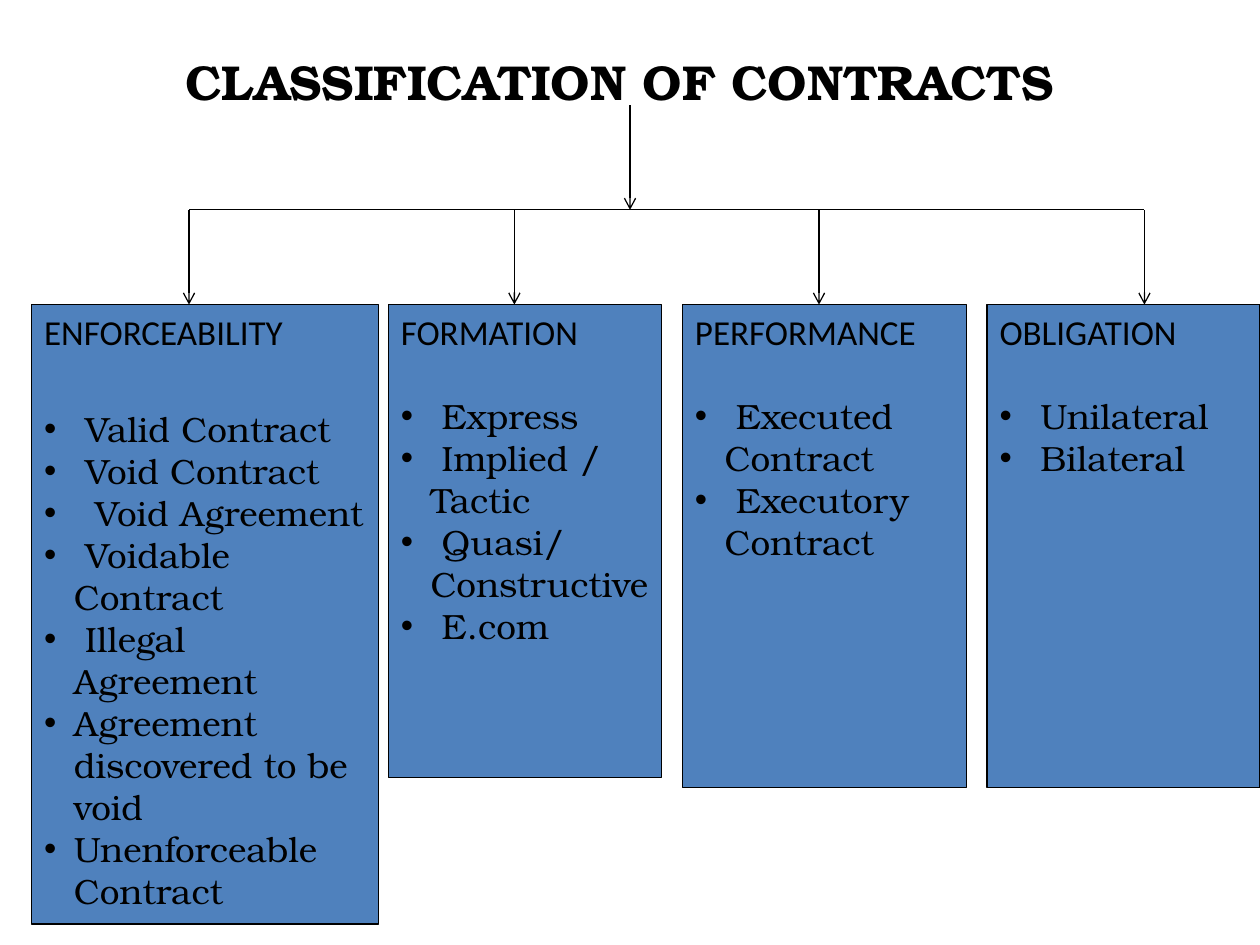
from dataclasses import dataclass

from lxml import etree
from pptx import Presentation
from pptx import util as u
from pptx.dml.color import RGBColor
from pptx.enum import shapes, text
from pptx.oxml.ns import qn

COLORS = {"ink": "000000", "box": "4F81BD"}
SERIF = "TeX Gyre Bonum"
SANS = "Calibri"
CENTER_X, TITLE_BOTTOM, BRANCH_Y, BOX_TOP = 12.7, 2.12, 4.23, 6.14
HANG = 0.6


@dataclass
class Item:
    label: str
    extra_indent: float = 0


@dataclass
class Category:
    heading: str
    left: float
    width: float
    height: float
    arrow_x: float
    items: list[Item]
    gap: float = 24


CATEGORIES = [
    Category("ENFORCEABILITY", 0.64, 6.99, 12.49, 3.81, [
        Item(" Valid Contract"),
        Item(" Void Contract"),
        Item(" Void Agreement", 0.2),
        Item(" Voidable Contract"),
        Item(" Illegal Agreement"),
        Item("Agreement discovered to be void"),
        Item("Unenforceable Contract"),
    ], gap=31),
    Category("FORMATION", 7.83, 5.5, 9.53, 10.37, [
        Item(" Express"),
        Item(" Implied / Tactic"),
        Item(" Quasi/ Constructive"),
        Item(" E.com"),
    ]),
    Category("PERFORMANCE", 13.76, 5.72, 9.74, 16.51, [
        Item(" Executed Contract"),
        Item(" Executory Contract"),
    ]),
    Category("OBLIGATION", 19.9, 5.5, 9.74, 23.07, [
        Item(" Unilateral"),
        Item(" Bilateral"),
    ]),
]


def color(name: str) -> RGBColor:
    return RGBColor.from_string(COLORS[name])


def style(paragraph, font_name: str, size: float, bold: bool = False) -> None:
    font = paragraph.font
    font.name, font.size, font.bold = font_name, u.Pt(size), bold
    font.color.rgb = color("ink")


def add_bullet(paragraph, indent: float) -> None:
    properties = paragraph._p.get_or_add_pPr()
    properties.set("marL", str(u.Cm(indent)))
    properties.set("indent", str(-u.Cm(indent)))
    bullet_font = etree.Element(qn("a:buFont"), typeface="Arial")
    bullet = etree.Element(qn("a:buChar"), char="•")
    defaults = properties.find(qn("a:defRPr"))
    defaults.addprevious(bullet_font)
    defaults.addprevious(bullet)


def add_line(slide, x1: float, y1: float, x2: float, y2: float, arrow: bool = True) -> None:
    connector = slide.shapes.add_connector(
        shapes.MSO_CONNECTOR.STRAIGHT, u.Cm(x1), u.Cm(y1), u.Cm(x2), u.Cm(y2))
    connector.line.color.rgb = color("ink")
    connector.line.width = u.Pt(0.75)
    if arrow:
        etree.SubElement(connector.line._get_or_add_ln(), qn("a:tailEnd"), type="arrow")
    etree.SubElement(connector._element.spPr, qn("a:effectLst"))


def add_title(slide, title: str) -> None:
    shape = slide.shapes.add_textbox(u.Cm(0.64), u.Cm(0.91), u.Cm(23.7), u.Cm(1.4))
    shape.text_frame.word_wrap = True
    paragraph = shape.text_frame.paragraphs[0]
    paragraph.text = title
    paragraph.alignment = text.PP_ALIGN.CENTER
    style(paragraph, SERIF, 28, bold=True)


def add_category(slide, category: Category) -> None:
    shape = slide.shapes.add_shape(
        shapes.MSO_SHAPE.RECTANGLE, u.Cm(category.left), u.Cm(BOX_TOP),
        u.Cm(category.width), u.Cm(category.height))
    shape.shadow.inherit = False
    shape.fill.solid()
    shape.fill.fore_color.rgb = color("box")
    shape.line.color.rgb = color("ink")
    shape.line.width = u.Pt(0.75)
    frame = shape.text_frame
    frame.word_wrap = True
    frame.vertical_anchor = text.MSO_ANCHOR.TOP
    frame.margin_right = u.Cm(0.2)
    heading = frame.paragraphs[0]
    heading.text = category.heading
    heading.alignment = text.PP_ALIGN.LEFT
    heading.space_after = u.Pt(category.gap)
    style(heading, SANS, 20)
    for item in category.items:
        paragraph = frame.add_paragraph()
        paragraph.text = item.label
        paragraph.alignment = text.PP_ALIGN.LEFT
        style(paragraph, SERIF, 20)
        add_bullet(paragraph, HANG + item.extra_indent)


def main() -> None:
    presentation = Presentation()
    presentation.slide_width, presentation.slide_height = u.Cm(25.4), u.Cm(19.05)
    slide = presentation.slides.add_slide(presentation.slide_layouts[6])
    add_title(slide, "CLASSIFICATION OF CONTRACTS")
    add_line(slide, CENTER_X, TITLE_BOTTOM, CENTER_X, BRANCH_Y)
    add_line(slide, CATEGORIES[0].arrow_x, BRANCH_Y,
             CATEGORIES[-1].arrow_x, BRANCH_Y, arrow=False)
    for category in CATEGORIES:
        add_line(slide, category.arrow_x, BRANCH_Y, category.arrow_x, BOX_TOP)
        add_category(slide, category)
    presentation.save("out.pptx")


if __name__ == "__main__":
    main()
